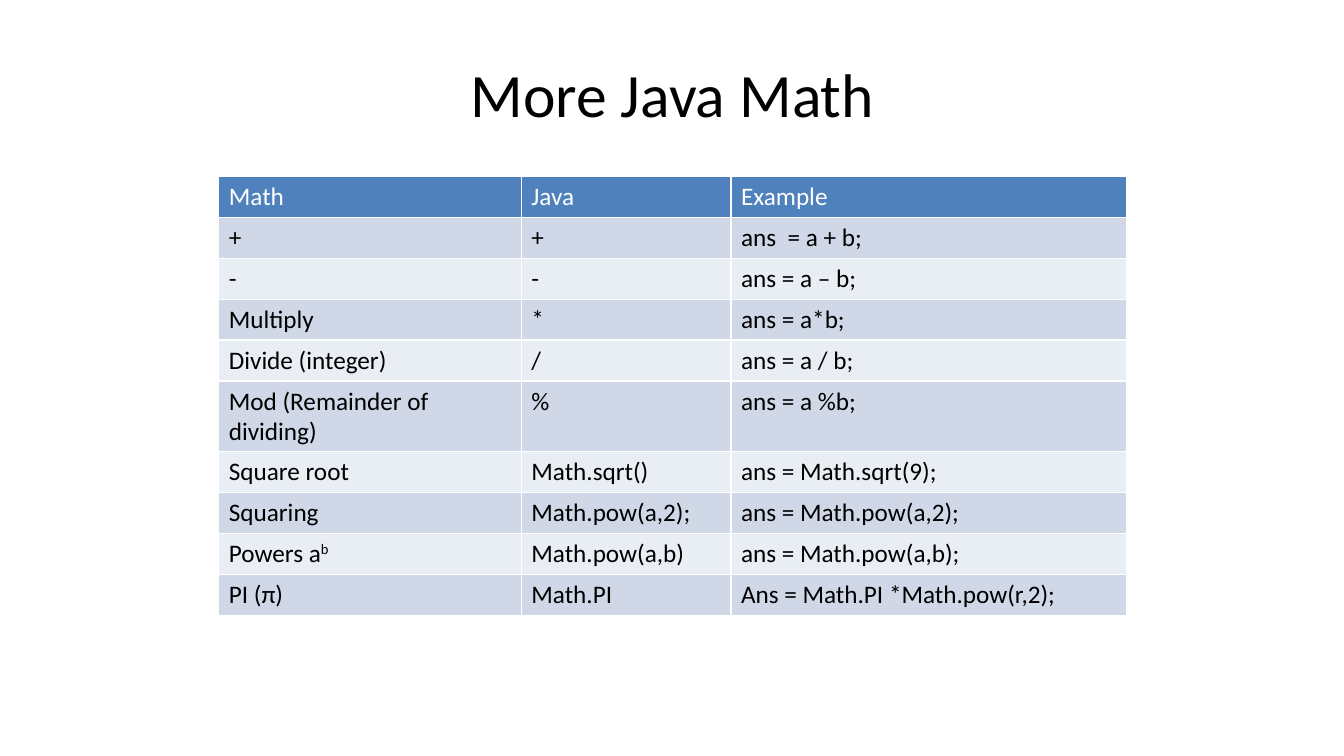
from pptx import Presentation
from pptx.dml.color import RGBColor
from pptx.enum import text
from pptx.util import Inches, Pt

HEADER_FILL = "4F81BD"
BAND_FILLS = ["E9EDF4", "D0D8E8"]
COLUMN_WIDTHS = [3, 2.08, 3.92]
ROWS = [
    ("Math", "Java", "Example"),
    ("+", "+", "ans  = a + b;"),
    ("-", "-", "ans = a – b;"),
    ("Multiply", "*", "ans = a*b;"),
    ("Divide (integer)", "/", "ans = a / b;"),
    ("Mod (Remainder of dividing)", "%", "ans = a %b;"),
    ("Square root", "Math.sqrt()", "ans = Math.sqrt(9);"),
    ("Squaring", "Math.pow(a,2);", "ans = Math.pow(a,2);"),
    ("Powers a", "Math.pow(a,b)", "ans = Math.pow(a,b);"),
    ("PI (π)", "Math.PI", "Ans = Math.PI *Math.pow(r,2);"),
]


def rgb(color):
    return RGBColor.from_string(color)


def style_run(r, size, color):
    r.font.name = "Calibri"
    r.font.size = Pt(size)
    r.font.bold = False
    r.font.color.rgb = rgb(color)


prs = Presentation()
prs.slide_width, prs.slide_height = Inches(13.33), Inches(7.5)
s = prs.slides.add_slide(prs.slide_layouts[6])

title = s.shapes.add_textbox(Inches(0.67), Inches(0.3), Inches(12), Inches(1.25))
tf = title.text_frame
tf.word_wrap = True
tf.vertical_anchor = text.MSO_ANCHOR.MIDDLE
p = tf.paragraphs[0]
p.text = "More Java Math"
p.alignment = text.PP_ALIGN.CENTER
style_run(p.runs[0], 44, "000000")

# The default table style supplies the white cell borders.
table = s.shapes.add_table(len(ROWS), len(COLUMN_WIDTHS), Inches(2.17), Inches(1.75),
                           Inches(9), Inches(4.06)).table
for column, width in zip(table.columns, COLUMN_WIDTHS):
    column.width = Inches(width)

for i, row in enumerate(ROWS):
    fill, color = (BAND_FILLS[i % 2], "000000") if i else (HEADER_FILL, "FFFFFF")
    for j, value in enumerate(row):
        cell = table.cell(i, j)
        cell.fill.solid()
        cell.fill.fore_color.rgb = rgb(fill)
        p = cell.text_frame.paragraphs[0]
        p.text = value
        if value == "Powers a":
            exponent = p.add_run()
            exponent.text = "b"
            exponent.font._element.set("baseline", "30000")
        for r in p.runs:
            style_run(r, 18, color)

prs.save("out.pptx")
